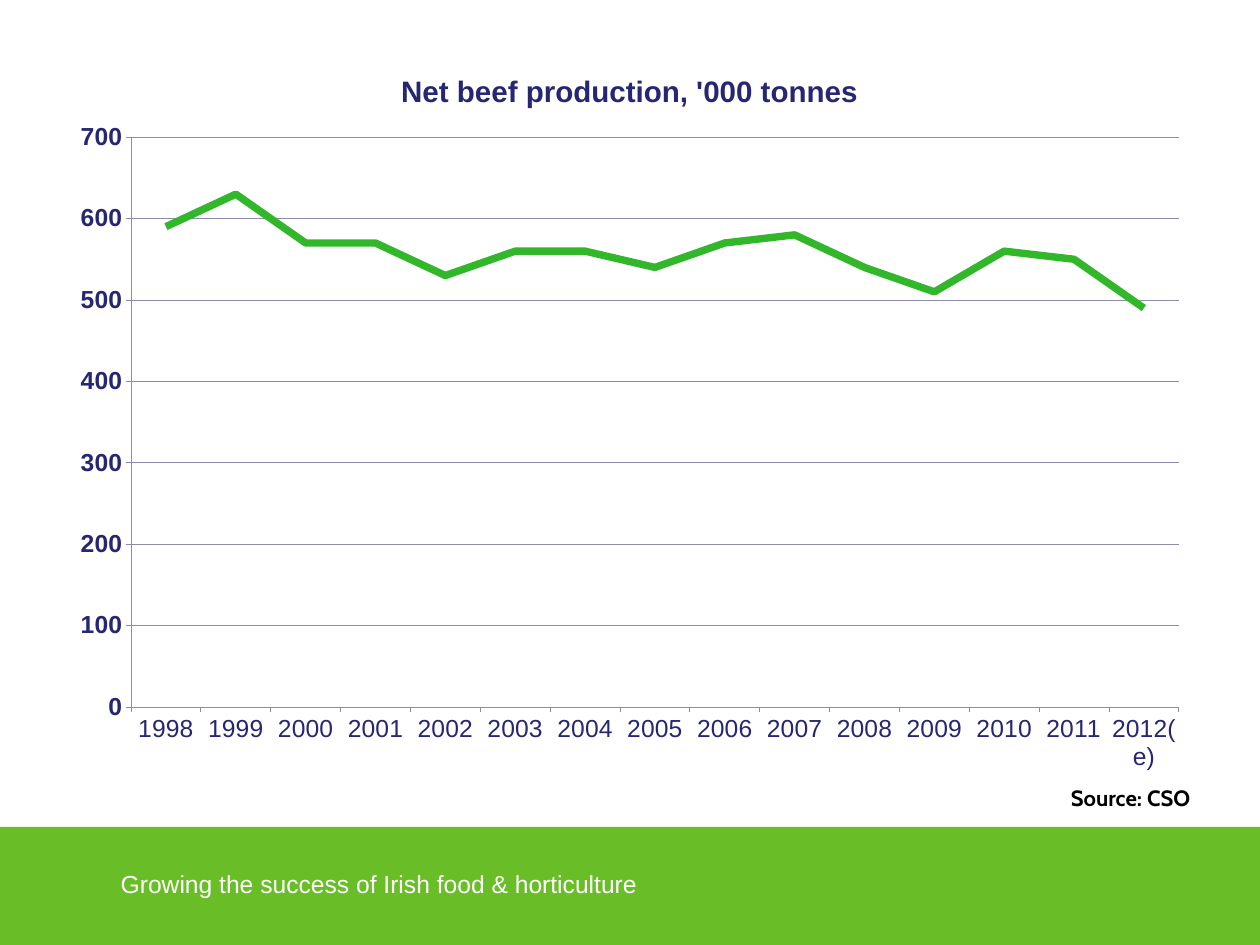
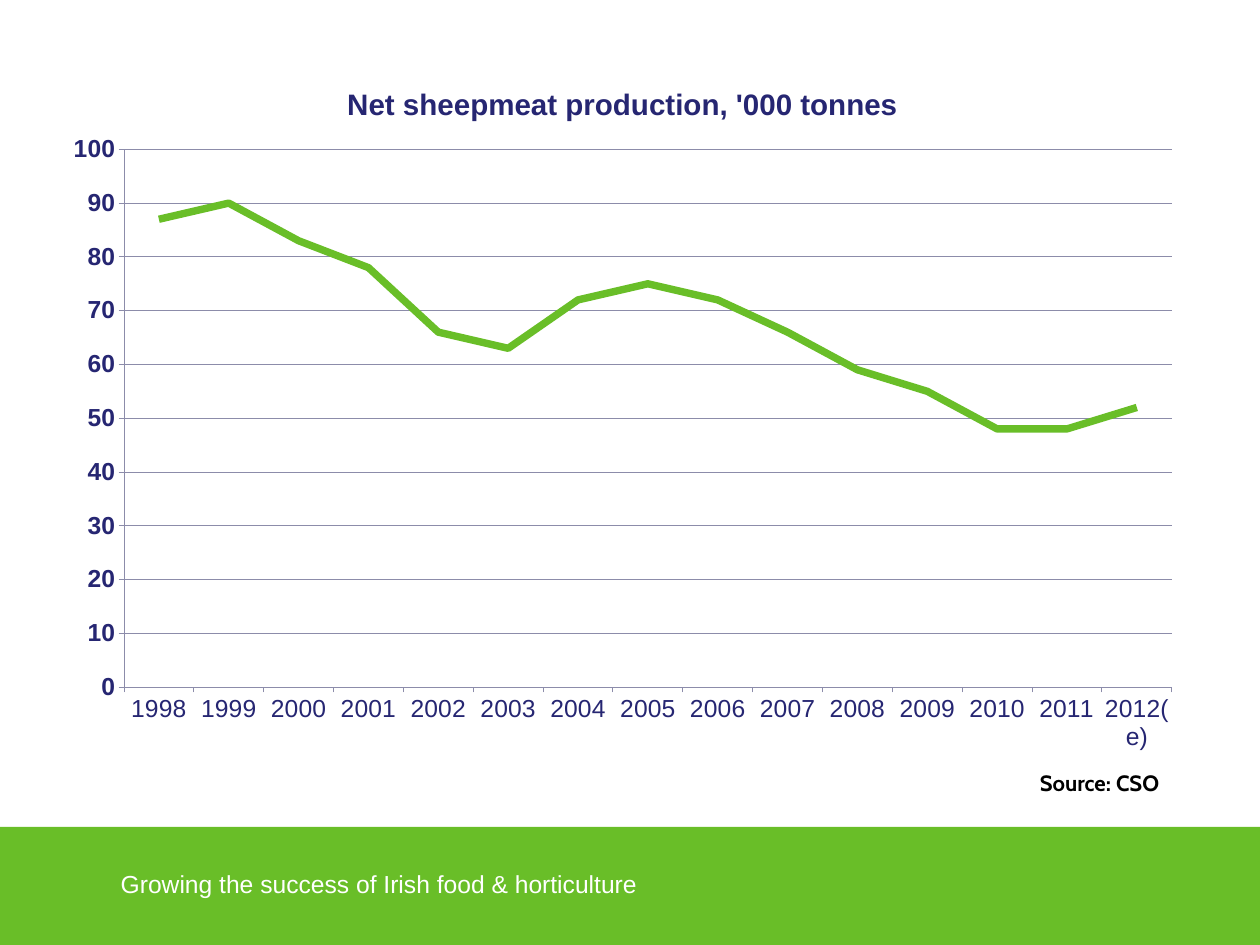
from lxml import etree
from pptx import Presentation
from pptx.chart.data import CategoryChartData
from pptx.dml.color import RGBColor
from pptx.enum.chart import XL_CHART_TYPE, XL_TICK_MARK
from pptx.enum.shapes import MSO_SHAPE
from pptx.enum.text import MSO_ANCHOR, MSO_AUTO_SIZE, PP_ALIGN
from pptx.oxml.ns import qn
from pptx.util import Pt

LINE_CHART = XL_CHART_TYPE.LINE
TICK_OUTSIDE, TICK_NONE = XL_TICK_MARK.OUTSIDE, XL_TICK_MARK.NONE

# Content
TAGLINE = "Growing the success of Irish food & horticulture"
SOURCE = "Source: CSO"
YEARS = [str(year) for year in range(1998, 2012)] + ["2012(e)"]
CHARTS = [
    {
        "title": "Net beef production, '000 tonnes",
        "values": [590, 630, 570, 570, 530, 560, 560, 540, 570, 580, 540, 510, 560, 550, 490],
        "line": "beef", "top_value": 700, "step": 100,
        "frame": (46.8, 38.2, 929.5, 601.2),
        "plot": (106.5, 111.5, 851.6, 463.2),
        "source_at": (855.4, 633.6),
    },
    {
        "title": "Net sheepmeat production, '000 tonnes",
        "values": [87, 90, 83, 78, 66, 63, 72, 75, 72, 66, 59, 55, 48, 48, 52],
        "line": "green", "top_value": 100, "step": 10,
        "frame": (41, 49.7, 929.5, 572.4),
        "plot": (100.8, 121.4, 851.6, 437),
        "source_at": (830.2, 622.1),
    },
]

# Shared style
COLORS = {"green": "69BE28", "beef": "32B72B", "navy": "262672",
          "grid": "8C8CAA", "white": "FFFFFF", "black": "000000"}
PAGE_WIDTH, PAGE_HEIGHT = 1024, 768
BAND_HEIGHT = 96


def color(name):
    return RGBColor.from_string(COLORS[name])


def style_font(font, size, color_name, name="Arial", bold=False):
    font.name, font.size, font.bold = name, Pt(size), bold
    font.color.rgb = color(color_name)


def add_text(page, text, left, top, width, height):
    box = page.shapes.add_textbox(Pt(left), Pt(top), Pt(width), Pt(height))
    box.text_frame.text = text
    return box


def move_footer_to_layout(page):
    """Build the green band and tagline, then hand them to the layout."""
    layout = page.slide_layout
    for placeholder in list(layout.placeholders):
        layout.shapes.element.remove(placeholder.element)
    band = page.shapes.add_shape(MSO_SHAPE.RECTANGLE, 0, Pt(PAGE_HEIGHT - BAND_HEIGHT),
                                 Pt(PAGE_WIDTH), Pt(BAND_HEIGHT))
    band.shadow.inherit = False
    band.fill.solid()
    band.fill.fore_color.rgb = color("green")
    band.line.fill.background()
    tagline = add_text(page, TAGLINE, 93.6, 701.3, 571.7, 33.1)
    frame = tagline.text_frame
    frame.word_wrap = True
    frame.vertical_anchor = MSO_ANCHOR.MIDDLE
    frame.margin_left = frame.margin_right = Pt(4.5)
    frame.margin_top = frame.margin_bottom = Pt(4.5)
    style_font(frame.paragraphs[0].font, 20, "white")
    for shape in (band, tagline):
        layout.shapes.element.append(shape.element)


def place_plot(chart, frame, plot):
    """Fix the inner plot area, as fractions of the chart frame."""
    left, top, width, height = frame
    fractions = {"x": (plot[0] - left) / width, "y": (plot[1] - top) / height,
                 "w": plot[2] / width, "h": plot[3] / height}
    area = chart.element.find(".//" + qn("c:plotArea"))
    for old_layout in area.findall(qn("c:layout")):
        area.remove(old_layout)
    layout = etree.Element(qn("c:layout"))
    area.insert(0, layout)
    manual = etree.SubElement(layout, qn("c:manualLayout"))
    settings = [("layoutTarget", "inner"), ("xMode", "edge"), ("yMode", "edge")]
    settings += [(key, f"{value:.4f}") for key, value in fractions.items()]
    for tag, value in settings:
        etree.SubElement(manual, qn("c:" + tag)).set("val", value)


def style_line(line, color_name, width):
    line.color.rgb = color(color_name)
    line.width = Pt(width)


def add_line_chart(page, item):
    data = CategoryChartData()
    data.categories = YEARS
    data.add_series("Series 1", item["values"])
    chart = page.shapes.add_chart(LINE_CHART, *map(Pt, item["frame"]), data).chart
    style_font(chart.font, 10, "navy")
    chart.has_legend = False
    chart.has_title = True
    chart.chart_title.include_in_layout = False
    title = chart.chart_title.text_frame
    title.text = item["title"]
    style_font(title.paragraphs[0].font, 24, "navy", bold=True)

    # Axes
    years, tonnes = chart.category_axis, chart.value_axis
    for axis in (years, tonnes):
        axis.major_tick_mark = TICK_OUTSIDE
        axis.minor_tick_mark = TICK_NONE
        style_font(axis.tick_labels.font, 20, "navy", bold=axis is tonnes)
        style_line(axis.format.line, "grid", 0.75)
    tonnes.minimum_scale = 0
    tonnes.maximum_scale = item["top_value"]
    tonnes.major_unit = item["step"]
    tonnes.has_major_gridlines = True
    style_line(tonnes.major_gridlines.format.line, "grid", 0.75)

    # Series
    plot = chart.plots[0]
    plot.vary_by_categories = False
    series = plot.series[0]
    series.smooth = False
    style_line(series.format.line, item["line"], 6)
    place_plot(chart, item["frame"], item["plot"])


def add_source(page, position):
    frame = add_text(page, SOURCE, *position, 126.7, 28.8).text_frame
    frame.word_wrap = False
    frame.auto_size = MSO_AUTO_SIZE.SHAPE_TO_FIT_TEXT
    paragraph = frame.paragraphs[0]
    paragraph.alignment = PP_ALIGN.CENTER
    style_font(paragraph.font, 18, "black", "Cabin", bold=True)


def main():
    deck = Presentation()
    deck.slide_width, deck.slide_height = Pt(PAGE_WIDTH), Pt(PAGE_HEIGHT)
    blank = deck.slide_layouts[6]
    for number, item in enumerate(CHARTS):
        page = deck.slides.add_slide(blank)
        if number == 0:
            move_footer_to_layout(page)
        add_line_chart(page, item)
        add_source(page, item["source_at"])
    deck.save("out.pptx")


if __name__ == "__main__":
    main()
